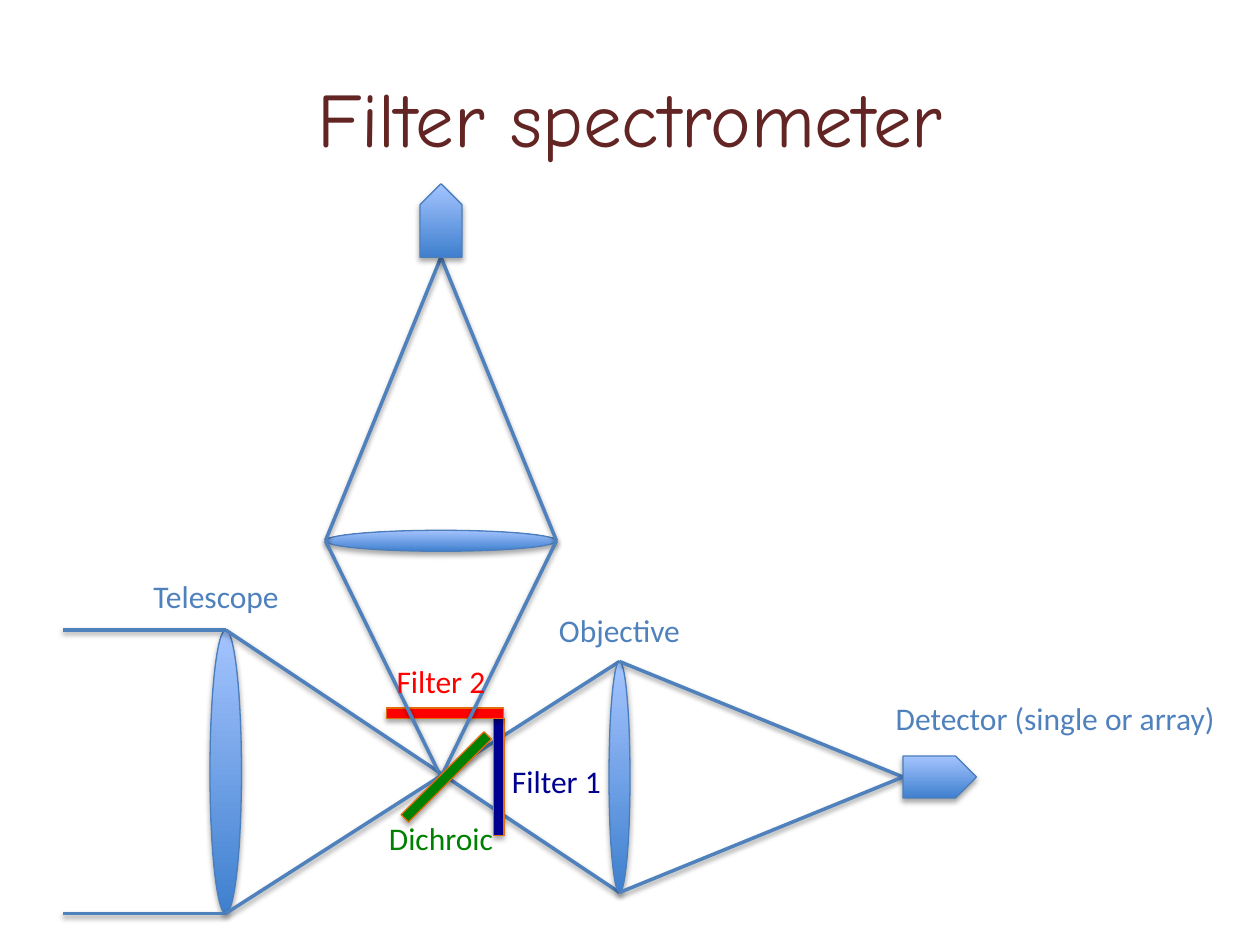
"""Build the filter spectrometer slide: a two-channel optical diagram with labels."""
import pptx
import pptx.dml.color
import pptx.enum.shapes
import pptx.enum.text
import pptx.oxml
import pptx.util

Pt = pptx.util.Pt
SHAPE = pptx.enum.shapes.MSO_SHAPE
ALIGN = pptx.enum.text.PP_ALIGN
ANCHOR = pptx.enum.text.MSO_ANCHOR

BLUE, RED, NAVY, GREEN = "4F81BD", "FF0000", "000090", "008000"
GLASS_DARK, GLASS_LIGHT, GLASS_EDGE = "3F80CE", "A4C4FF", "4B7EBC"
FILTER_EDGE, MAROON = "E46C0A", "632523"

TITLE = "Filter spectrometer"
TITLE_PLACE = {"left": 36, "top": 21.6, "width": 648, "height": 90}

SKY_TOP, SKY_BOTTOM = (36, 360), (36, 522)
TELESCOPE_TOP, TELESCOPE_BOTTOM = (129, 360), (129, 522)
OBJECTIVE_TOP, OBJECTIVE_BOTTOM = (354, 378), (354, 510)
DETECTOR = (516, 444)
FOCUS = (252, 444)
BRANCH_LEFT, BRANCH_RIGHT = (186, 309), (318, 309)
BRANCH_DETECTOR = (252, 147)

LENS, PLATE, SENSOR = SHAPE.OVAL, SHAPE.RECTANGLE, SHAPE.PENTAGON
PLATE_SIZE, SENSOR_SIZE, SMALL_LENS = (6, 67), (42, 24), (12, 132)

# Each optic: preset, centre, size, rotation, solid colour or None for glass.
TELESCOPE_LENS = [(LENS, (129, 441), (18, 162), 0, None)]
TELESCOPE_BEAMS = [
    (SKY_TOP, TELESCOPE_TOP), (SKY_BOTTOM, TELESCOPE_BOTTOM),
    (TELESCOPE_TOP, OBJECTIVE_BOTTOM), (TELESCOPE_BOTTOM, OBJECTIVE_TOP),
]
OBJECTIVE_OPTICS = [
    (LENS, (354, 444), SMALL_LENS, 0, None),
    (PLATE, (285, 444), PLATE_SIZE, 0, NAVY),
]
DETECTOR_BEAMS = [(OBJECTIVE_TOP, DETECTOR), (OBJECTIVE_BOTTOM, DETECTOR)]
DETECTOR_OPTICS = [(SENSOR, (537, 444), SENSOR_SIZE, 0, None)]
BRANCH_LENS = [(LENS, (252, 309), SMALL_LENS, 270, None)]
BRANCH_BEAMS = [(BRANCH_LEFT, BRANCH_DETECTOR), (BRANCH_RIGHT, BRANCH_DETECTOR)]
BRANCH_SENSOR = [(SENSOR, (252, 126), SENSOR_SIZE, 270, None)]
FILTER_2 = [(PLATE, (254.3, 407.5), PLATE_SIZE, 270, RED)]
FOCUS_BEAMS = [(FOCUS, BRANCH_LEFT), (BRANCH_RIGHT, FOCUS)]
DICHROIC = [(PLATE, (255, 444), PLATE_SIZE, 45, GREEN)]

LABEL_HEIGHT = 29
LABELS = [
    ("Filter 1", 264, 432, 108, NAVY, ALIGN.CENTER),
    ("Telescope", 80.6, 326, 93, BLUE, ALIGN.LEFT),
    ("Objective", 306, 345.6, 96, BLUE, ALIGN.CENTER),
    ("Detector (single or array)", 498, 396, 210, BLUE, ALIGN.CENTER),
    ("Filter 2", 198, 375, 108, RED, ALIGN.CENTER),
    ("Dichroic", 198, 464.4, 108, GREEN, ALIGN.CENTER),
]


def paint(color_format, hex_color):
    color_format.rgb = pptx.dml.color.RGBColor.from_string(hex_color)


def apply(target, values):
    for name, value in values.items():
        setattr(target, name, value)


def cast_shadow(shape, opacity, distance):
    shape._element.spPr.append(pptx.oxml.parse_xml(
        '<a:effectLst xmlns:a="http://schemas.openxmlformats.org/drawingml/2006/main">'
        f'<a:outerShdw blurRad="{Pt(3.1)}" dist="{Pt(distance)}" dir="5400000" '
        'rotWithShape="0"><a:srgbClr val="000000">'
        f'<a:alpha val="{opacity * 1000}"/></a:srgbClr></a:outerShdw></a:effectLst>'))


def fill_glass(fill):
    fill.gradient()
    fill.gradient_angle = 90
    for stop, color in zip(fill.gradient_stops, (GLASS_DARK, GLASS_LIGHT)):
        paint(stop.color, color)
    for position, stop in enumerate(fill.gradient_stops):
        stop.position = position
    fill._xPr.find(pptx.oxml.ns.qn("a:gradFill")).set("rotWithShape", "0")


def add_optics(shapes, optics):
    for preset, (x, y), (width, height), rotation, color in optics:
        optic = shapes.add_shape(preset, Pt(x - width / 2), Pt(y - height / 2),
                                 Pt(width), Pt(height))
        optic.rotation = rotation
        if preset == SENSOR:
            optic.adjustments[0] = 0.5
        if color:
            optic.fill.solid()
            paint(optic.fill.fore_color, color)
        else:
            fill_glass(optic.fill)
        paint(optic.line.color, FILTER_EDGE if color else GLASS_EDGE)
        optic.line.width = Pt(0.75)
        cast_shadow(optic, 35, 1.8)


def add_beams(shapes, beams):
    for start, end in beams:
        beam = shapes.add_connector(pptx.enum.shapes.MSO_CONNECTOR.STRAIGHT,
                                    *map(Pt, start + end))
        paint(beam.line.color, BLUE)
        beam.line.width = Pt(2)
        cast_shadow(beam, 38, 1.6)


def write(frame, text, color, align, font_values):
    frame.text = text
    paragraph = frame.paragraphs[0]
    paragraph.alignment = align
    font = paragraph.runs[0].font
    apply(font, font_values)
    paint(font.color, color)


def add_labels(shapes):
    for text, left, top, width, color, align in LABELS:
        label = shapes.add_textbox(Pt(left), Pt(top), Pt(width), Pt(LABEL_HEIGHT))
        apply(label.text_frame, {
            "word_wrap": True,
            "auto_size": pptx.enum.text.MSO_AUTO_SIZE.SHAPE_TO_FIT_TEXT})
        write(label.text_frame, text, color, align, {"name": "Calibri", "size": Pt(18)})


def main():
    deck = pptx.Presentation()
    apply(deck, {"slide_width": Pt(720), "slide_height": Pt(540)})
    slide = deck.slides.add_slide(deck.slide_layouts[5])
    shapes = slide.shapes

    apply(shapes.title, {side: Pt(length) for side, length in TITLE_PLACE.items()})
    shapes.title.text_frame.vertical_anchor = ANCHOR.MIDDLE
    write(shapes.title.text_frame, TITLE, MAROON, ALIGN.CENTER,
          {"name": "Comic Neue", "size": Pt(44)})

    add_optics(shapes, TELESCOPE_LENS)
    add_beams(shapes, TELESCOPE_BEAMS)
    add_optics(shapes, OBJECTIVE_OPTICS)
    add_beams(shapes, DETECTOR_BEAMS)
    add_optics(shapes, DETECTOR_OPTICS)

    branch = shapes.add_group_shape().shapes
    add_optics(branch, BRANCH_LENS)
    add_beams(branch, BRANCH_BEAMS)
    add_optics(branch, BRANCH_SENSOR)

    add_optics(shapes, FILTER_2)
    add_beams(shapes, FOCUS_BEAMS)
    add_optics(shapes, DICHROIC)
    add_labels(shapes)
    deck.save("out.pptx")


if __name__ == "__main__":
    main()
